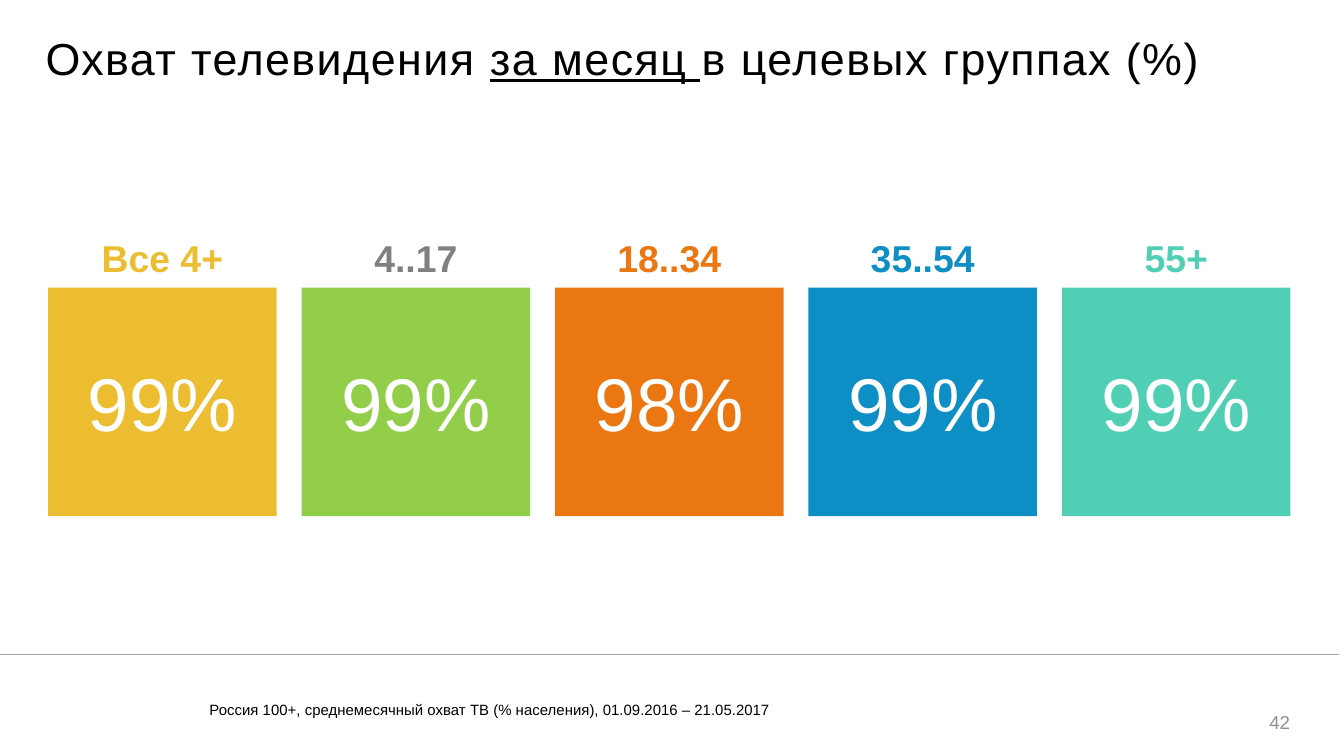
"""Builds the slide on monthly television reach by age group."""
from lxml.etree import SubElement
from pptx import Presentation
from pptx.dml.color import RGBColor as RGB
from pptx.enum.shapes import MSO_CONNECTOR as LINK, MSO_SHAPE as SHAPE
from pptx.enum.text import MSO_ANCHOR as ANCHOR, MSO_AUTO_SIZE as FIT, PP_ALIGN as ALIGN
from pptx.oxml.ns import qn
from pptx.util import Cm, Pt

BLACK = RGB(0x00, 0x00, 0x00)
WHITE = RGB(0xFF, 0xFF, 0xFF)
GREY = RGB(0x80, 0x80, 0x80)
PALE = RGB(0x8F, 0x8F, 0x8F)
RULE = RGB(0xA6, 0xA6, 0xA6)
GOLD = RGB(0xEC, 0xBD, 0x31)
GREEN = RGB(0x92, 0xCE, 0x4A)
ORANGE = RGB(0xEB, 0x77, 0x12)
BLUE = RGB(0x0D, 0x8E, 0xC5)
MINT = RGB(0x50, 0xCF, 0xB4)

TITLE = [("Охват телевидения ", False), ("за месяц ", True),
         ("в целевых группах (%)", False)]
GROUPS = [
    ("Все 4+", "99%", GOLD, GOLD),
    ("4..17", "99%", GREEN, GREY),
    ("18..34", "98%", ORANGE, ORANGE),
    ("35..54", "99%", BLUE, BLUE),
    ("55+", "99%", MINT, MINT),
]
SOURCE = "Россия 100+, среднемесячный охват ТВ (% населения), 01.09.2016 – 21.05.2017"
PAGE = "42"

WIDE, HIGH = 25.4, 14.29
LEFT, TOP, SIDE, STEP = 0.91, 5.44, 4.32, 4.79
LABEL = 1.12


def write(shape, text, size=20, color=BLACK, bold=False, align=ALIGN.LEFT,
          anchor=ANCHOR.TOP, pad=(0, 0, 0, 0), space=None, track=None):
    """Fill a shape with one paragraph of plain text or (text, underline) runs."""
    frame = shape.text_frame
    frame.word_wrap = True
    frame.auto_size = FIT.NONE
    frame.vertical_anchor = anchor
    (frame.margin_left, frame.margin_top,
     frame.margin_right, frame.margin_bottom) = map(Cm, pad)
    para = frame.paragraphs[0]
    para.alignment = align
    if space:
        para.line_spacing = Pt(space)
    for part, under in [(text, False)] if isinstance(text, str) else text:
        run = para.add_run()
        run.text = part
        font = run.font
        font.name, font.size, font.bold = "Arial", Pt(size), bold
        font.underline = under
        font.color.rgb = color
        if track:
            font._element.set("spc", str(track))


def main():
    deck = Presentation()
    deck.slide_width, deck.slide_height = Cm(WIDE), Cm(HIGH)
    slide = deck.slides.add_slide(deck.slide_layouts[5])
    shapes = slide.shapes

    rule = shapes.add_connector(LINK.STRAIGHT, 0, Cm(12.37), Cm(25.3), Cm(12.37))
    rule.line.color.rgb = RULE
    rule.line.width = Pt(0.25)
    SubElement(rule._element.spPr, qn("a:effectLst"))

    title = shapes.title
    title.left, title.top, title.width, title.height = 0, 0, Cm(WIDE), Cm(2.21)
    write(title, TITLE, size=24, pad=(0.86, 0.58, 0.76, 0), space=28.8, track=80)

    for i, (name, share, fill, ink) in enumerate(GROUPS):
        left = Cm(LEFT + i * STEP)
        tile = shapes.add_shape(SHAPE.RECTANGLE, left, Cm(TOP), Cm(SIDE), Cm(SIDE))
        tile.shadow.inherit = False
        tile.fill.solid()
        tile.fill.fore_color.rgb = fill
        tile.line.fill.background()
        write(tile, share, size=40, color=WHITE, align=ALIGN.CENTER, anchor=ANCHOR.MIDDLE)
        label = shapes.add_textbox(left, Cm(TOP - LABEL), Cm(SIDE), Cm(LABEL))
        write(label, name, color=ink, bold=True, align=ALIGN.CENTER,
              pad=(0.25, 0.13, 0.25, 0.13))

    note = shapes.add_textbox(Cm(3.71), Cm(13.18), Cm(19.13), Cm(0.81))
    write(note, SOURCE, size=8, anchor=ANCHOR.MIDDLE, pad=(0.25, 0, 0.25, 0.33))
    page = shapes.add_textbox(Cm(23.29), Cm(13.28), Cm(1.09), Cm(0.58))
    write(page, PAGE, size=10, color=PALE, align=ALIGN.RIGHT, anchor=ANCHOR.BOTTOM)

    deck.save("out.pptx")


if __name__ == "__main__":
    main()
